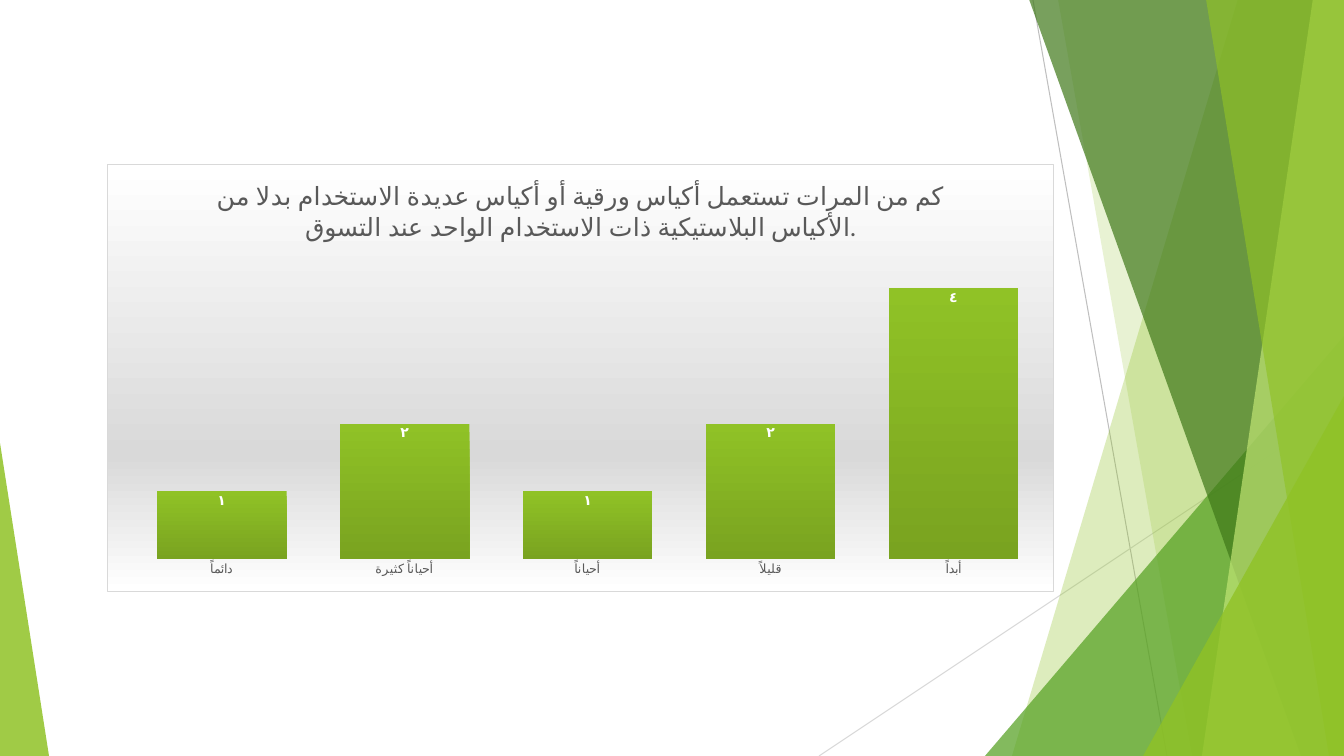
from lxml.etree import SubElement
from pptx import Presentation
from pptx.chart.data import CategoryChartData
from pptx.dml.color import RGBColor
from pptx.enum.chart import XL_CHART_TYPE, XL_LABEL_POSITION, XL_TICK_MARK
from pptx.enum.shapes import MSO_CONNECTOR, MSO_SHAPE
from pptx.oxml import parse_xml
from pptx.oxml.ns import nsdecls, qn
from pptx.util import Pt

EMU_PER_PX = 914400 / 100.8
WIDTH, HEIGHT = 1344, 756
FONT = "Lato"
NUMBER_FORMAT = "[$-2000401]0"

BLACK = RGBColor(0x00, 0x00, 0x00)
WHITE = RGBColor(0xFF, 0xFF, 0xFF)
TEXT_GRAY = RGBColor(0x59, 0x59, 0x59)
LIGHT_GRAY = RGBColor(0xD9, 0xD9, 0xD9)
MID_GRAY = RGBColor(0xBF, 0xBF, 0xBF)
LIME = RGBColor(0x90, 0xC2, 0x26)
DARK_LIME = RGBColor(0x79, 0xA3, 0x20)
PALE_LIME = RGBColor(0xC0, 0xE4, 0x74)
GREEN = RGBColor(0x54, 0xA0, 0x21)
DARK_GREEN = RGBColor(0x3F, 0x78, 0x19)

QUESTION = ("كم من المرات تستعمل أكياس ورقية أو أكياس عديدة الاستخدام بدلا من "
            "الأكياس البلاستيكية ذات الاستخدام الواحد عند التسوق.")
ANSWERS = {"دائماً": 1, "أحياناً كثيرة": 2, "أحياناً": 1, "قليلاً": 2, "أبداً": 4}


def px(length):
    return round(length * EMU_PER_PX)


def set_font(font, size, color, bold=False):
    font.name, font.size, font.bold = FONT, Pt(size), bold
    font.color.rgb = color


class SlideBuilder:
    def __init__(self, slide):
        self.slide = slide

    def line(self, start, end, color):
        connector = self.slide.shapes.add_connector(
            MSO_CONNECTOR.STRAIGHT, *map(px, start + end))
        connector.line.color.rgb = color
        connector.line.width = Pt(0.75)
        SubElement(connector.element.spPr, qn("a:effectLst"))

    def paint(self, shape, color, opacity):
        shape.shadow.inherit = False
        shape.line.fill.background()
        shape.fill.solid()
        shape.fill.fore_color.rgb = color
        for color_element in shape.element.spPr.iter(qn("a:srgbClr")):
            SubElement(color_element, qn("a:alpha"), val=str(opacity * 1000))

    def band(self, top_left, bottom_left, color, opacity):
        """Full-height band with a slanted left side, reaching the right edge."""
        builder = self.slide.shapes.build_freeform(top_left, -1, scale=EMU_PER_PX)
        builder.add_line_segments(
            [(WIDTH, -1), (WIDTH, HEIGHT), (bottom_left, HEIGHT)], close=True)
        self.paint(builder.convert_to_shape(), color, opacity)

    def triangle(self, left, top, width, apex, color, opacity):
        """Triangle standing on the bottom edge of the slide."""
        shape = self.slide.shapes.add_shape(
            MSO_SHAPE.ISOSCELES_TRIANGLE, *map(px, (left, top, width, HEIGHT - top)))
        shape.adjustments[0] = apex
        self.paint(shape, color, opacity)

    def column_chart(self, left, top, width, height, title, answers):
        data = CategoryChartData()
        data.categories = list(answers)
        data.add_series("Series 1", list(answers.values()))
        chart = self.slide.shapes.add_chart(
            XL_CHART_TYPE.COLUMN_CLUSTERED,
            *map(px, (left, top, width, height)), data).chart
        set_font(chart.font, 10, BLACK)
        chart.has_legend = False

        # Title
        chart.has_title = True
        chart.chart_title.include_in_layout = False
        paragraph = chart.chart_title.text_frame.paragraphs[0]
        paragraph.text = title
        set_font(paragraph.runs[0].font, 18, TEXT_GRAY)

        # Axes
        categories, values = chart.category_axis, chart.value_axis
        categories.major_tick_mark = XL_TICK_MARK.NONE
        categories.format.line.fill.background()
        set_font(categories.tick_labels.font, 9, TEXT_GRAY)
        values.minimum_scale, values.maximum_scale = 0, 4.5
        values.has_major_gridlines = False
        values.tick_labels.number_format = NUMBER_FORMAT
        values.tick_labels.number_format_is_linked = False
        values.visible = False

        # Columns and their labels
        plot = chart.plots[0]
        plot.gap_width = 41
        plot.vary_by_categories = False
        series = plot.series[0]
        series.invert_if_negative = False
        fill = series.format.fill
        fill.gradient()
        fill.gradient_angle = 270
        for stop, color in zip(fill.gradient_stops, (LIME, DARK_LIME)):
            stop.color.rgb = color
        labels = series.data_labels
        labels.show_value = True
        labels.position = XL_LABEL_POSITION.INSIDE_END
        labels.number_format = NUMBER_FORMAT
        labels.number_format_is_linked = False
        set_font(labels.font, 10, WHITE, bold=True)

        self.chart_area(chart)
        self.plot_layout(chart, x=0.024, y=0.209, w=0.967, h=0.716)

    def chart_area(self, chart):
        stops = "".join(
            f'<a:gs pos="{position * 1000}"><a:srgbClr val="{color}"/></a:gs>'
            for position, color in ((0, WHITE), (68, LIGHT_GRAY), (100, WHITE)))
        chart.element.find(qn("c:chart")).addnext(parse_xml(
            f'<c:spPr {nsdecls("c", "a")}><a:gradFill><a:gsLst>{stops}</a:gsLst>'
            f'<a:lin ang="5400000" scaled="0"/></a:gradFill><a:ln w="{Pt(0.75)}">'
            f'<a:solidFill><a:srgbClr val="{LIGHT_GRAY}"/></a:solidFill></a:ln></c:spPr>'))

    def plot_layout(self, chart, **fractions):
        plot_area = chart.element.find(qn("c:chart")).find(qn("c:plotArea"))
        layout = plot_area.find(qn("c:layout"))
        if layout is None:
            layout = parse_xml(f'<c:layout {nsdecls("c")}/>')
            plot_area.insert(0, layout)
        manual = SubElement(layout, qn("c:manualLayout"))
        settings = {"layoutTarget": "inner", "xMode": "edge", "yMode": "edge"}
        for name, value in (settings | fractions).items():
            SubElement(manual, qn(f"c:{name}"), val=str(value))


def main():
    presentation = Presentation()
    presentation.slide_width, presentation.slide_height = px(WIDTH), px(HEIGHT)
    blank_layout = presentation.slide_layouts[6]
    builder = SlideBuilder(presentation.slides.add_slide(blank_layout))

    # Facet decoration, back to front
    builder.line((1033, 0), (1167, HEIGHT), MID_GRAY)
    builder.line((WIDTH, 406), (819, HEIGHT), LIGHT_GRAY)
    builder.band(1238, 1012, LIME, 30)
    builder.band(1058, 1192, LIME, 20)
    builder.triangle(985, 336, 359, 1, GREEN, 72)
    builder.band(1029, 1301, DARK_GREEN, 70)
    builder.band(1313, 1202, PALE_LIME, 70)
    builder.band(1206, 1329, LIME, 65)
    builder.triangle(1143, 396, 201, 1, LIME, 80)
    builder.triangle(0, 443, 49, 0, LIME, 85)

    # Survey result
    builder.column_chart(107, 164, 947, 428, QUESTION, ANSWERS)

    presentation.save("out.pptx")


if __name__ == "__main__":
    main()
